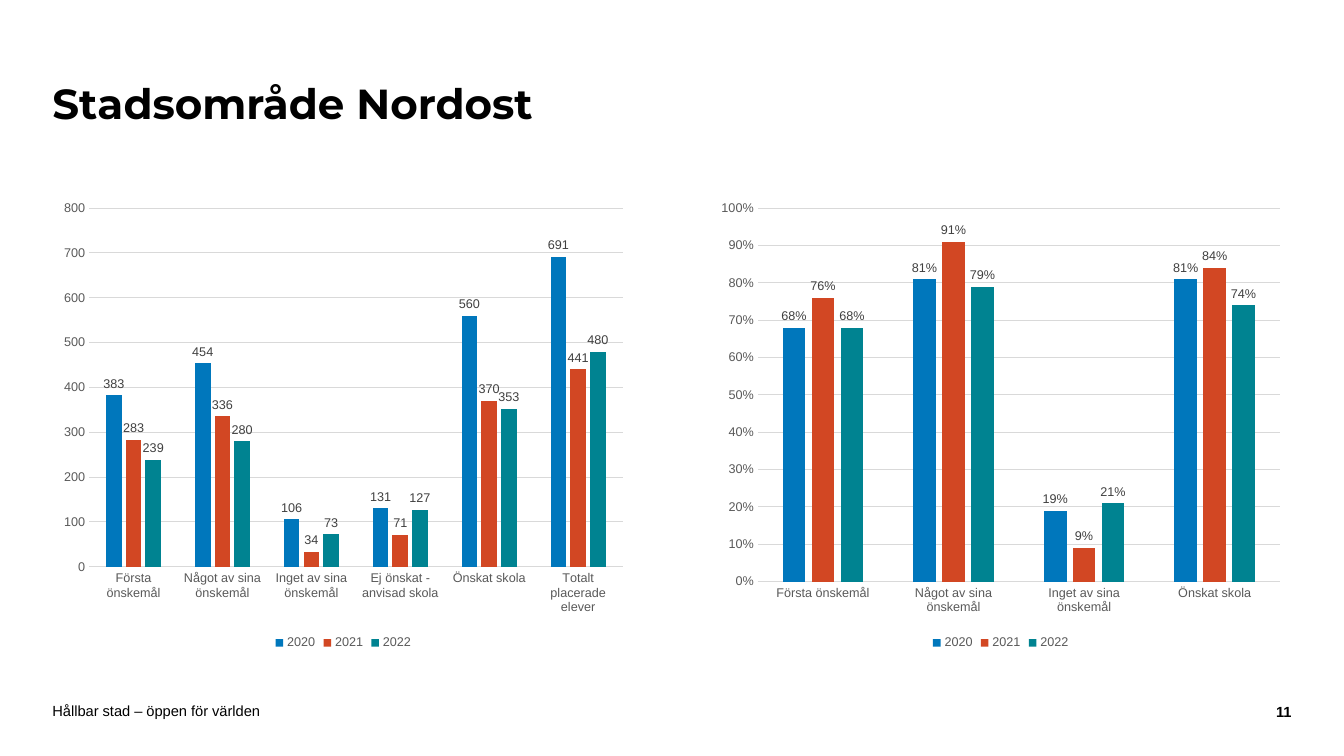
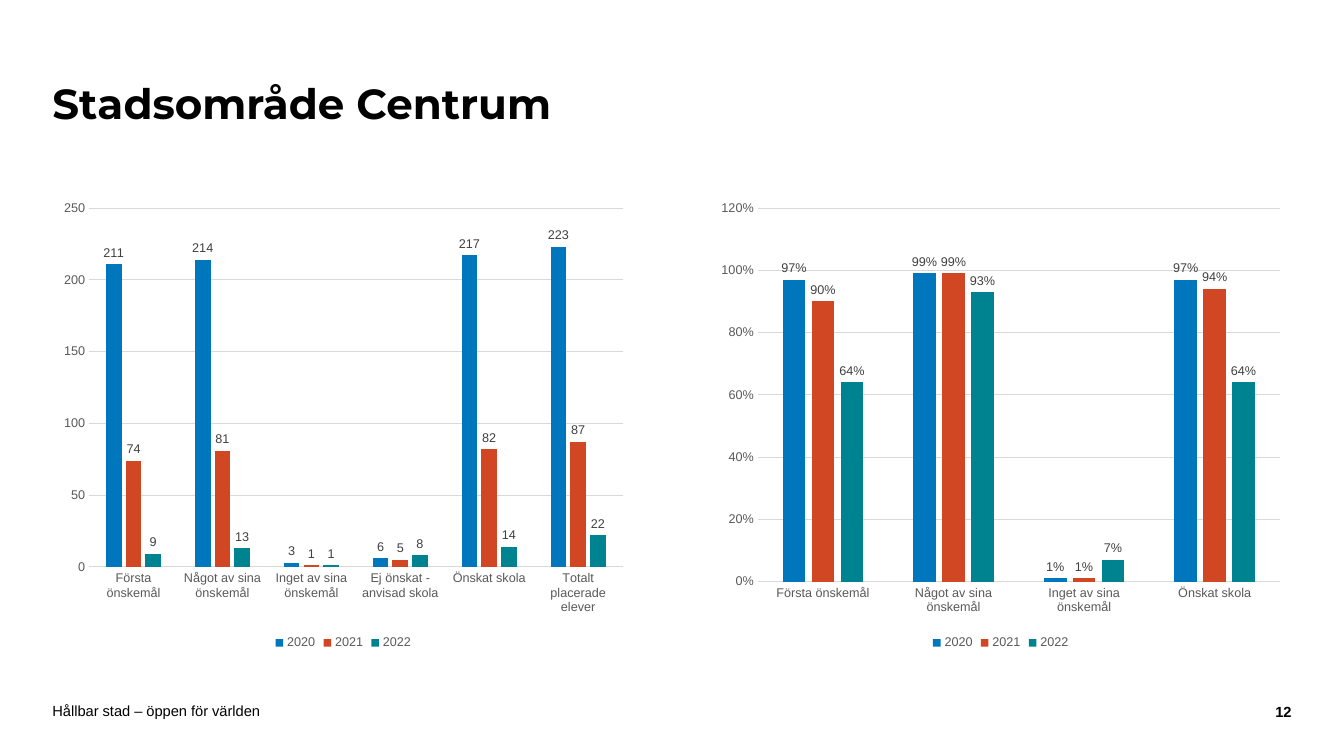
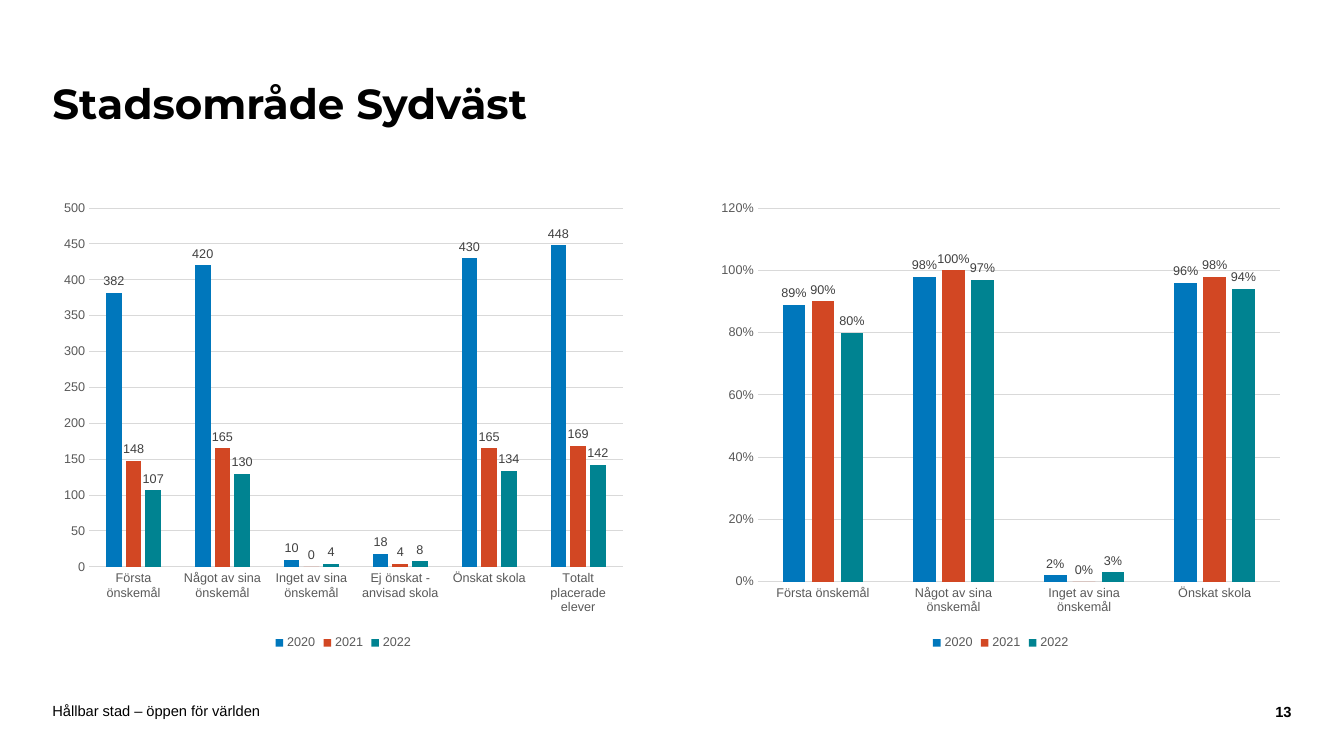
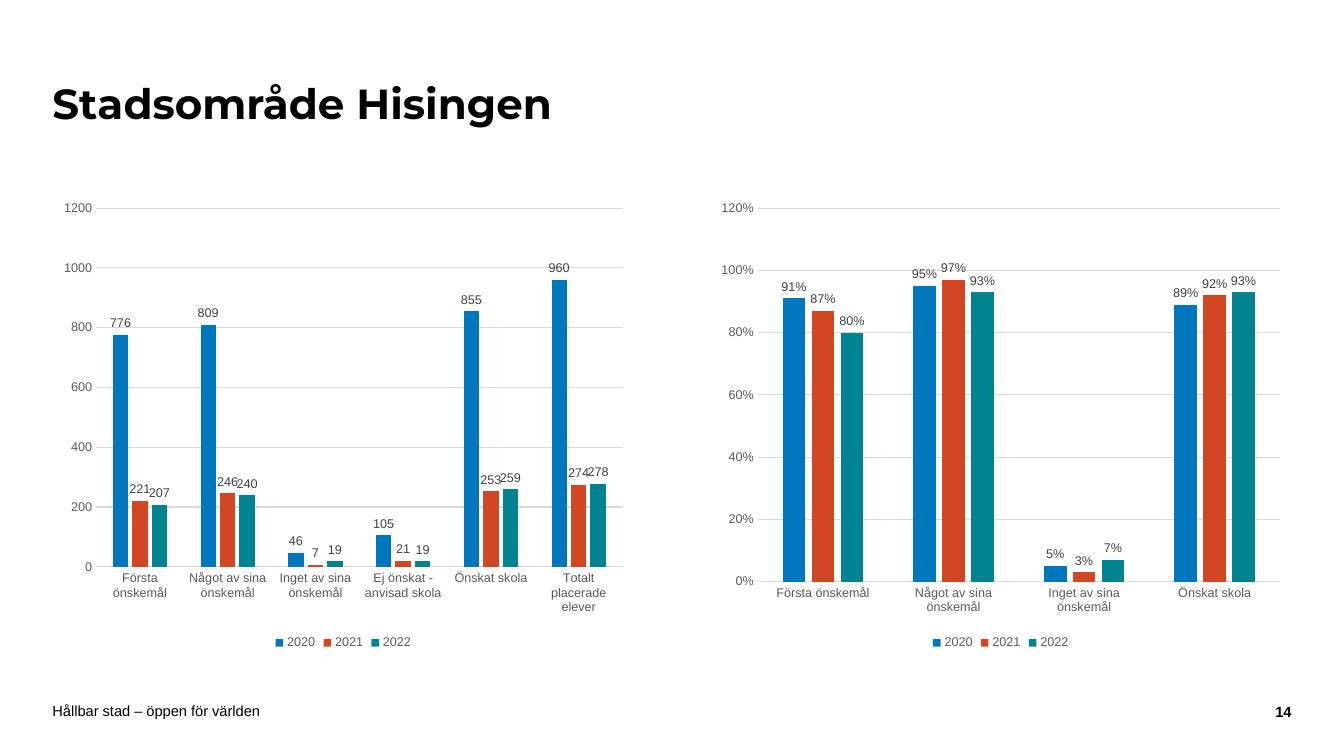
from dataclasses import dataclass

from pptx import Presentation
from pptx.chart.data import CategoryChartData
from pptx.dml.color import RGBColor
from pptx.enum.chart import XL_CHART_TYPE, XL_LABEL_POSITION, XL_LEGEND_POSITION, XL_TICK_MARK
from pptx.enum.text import MSO_ANCHOR, PP_ALIGN
from pptx.util import Inches, Pt

COLUMN = XL_CHART_TYPE.COLUMN_CLUSTERED
OUT_END = XL_LABEL_POSITION.OUTSIDE_END
BOTTOM = XL_LEGEND_POSITION.BOTTOM
NO_TICK = XL_TICK_MARK.NONE
MIDDLE = MSO_ANCHOR.MIDDLE
LEFT, RIGHT = PP_ALIGN.LEFT, PP_ALIGN.RIGHT


@dataclass(frozen=True)
class Theme:
    ink: str = "000000"
    paper: str = "FFFFFF"
    muted: str = "595959"
    label: str = "404040"
    grid: str = "D9D9D9"
    bars: tuple = ("0077BC", "D24723", "008391")
    head: str = "Montserrat"
    body: str = "Arial"
    title: float = 30
    foot: float = 10.5
    chart: float = 10
    small: float = 9
    rule: float = 0.75


THEME = Theme()

YEARS = ("2020", "2021", "2022")
FOOTER = "Hållbar stad – öppen för världen"
FIRST = 11
WISHES = ["Första önskemål", "Något av sina önskemål", "Inget av sina önskemål"]
COUNT_CATS = WISHES + ["Ej önskat - anvisad skola", "Önskat skola", "Totalt placerade elever"]
SHARE_CATS = WISHES + ["Önskat skola"]

AREAS = [
    {
        "title": "Stadsområde Nordost",
        "counts": [(383, 454, 106, 131, 560, 691), (283, 336, 34, 71, 370, 441), (239, 280, 73, 127, 353, 480)],
        "count_axis": (800, 100),
        "shares": [(0.68, 0.81, 0.19, 0.81), (0.76, 0.91, 0.09, 0.84), (0.68, 0.79, 0.21, 0.74)],
        "share_axis": (1, 0.1),
    },
    {
        "title": "Stadsområde Centrum",
        "counts": [(211, 214, 3, 6, 217, 223), (74, 81, 1, 5, 82, 87), (9, 13, 1, 8, 14, 22)],
        "count_axis": (250, 50),
        "shares": [(0.97, 0.99, 0.01, 0.97), (0.9, 0.99, 0.01, 0.94), (0.64, 0.93, 0.07, 0.64)],
        "share_axis": (1.2, 0.2),
    },
    {
        "title": "Stadsområde Sydväst",
        "counts": [(382, 420, 10, 18, 430, 448), (148, 165, 0, 4, 165, 169), (107, 130, 4, 8, 134, 142)],
        "count_axis": (500, 50),
        "shares": [(0.89, 0.98, 0.02, 0.96), (0.9, 1, 0, 0.98), (0.8, 0.97, 0.03, 0.94)],
        "share_axis": (1.2, 0.2),
    },
    {
        "title": "Stadsområde Hisingen",
        "counts": [(776, 809, 46, 105, 855, 960), (221, 246, 7, 21, 253, 274), (207, 240, 19, 19, 259, 278)],
        "count_axis": (1200, 200),
        "shares": [(0.91, 0.95, 0.05, 0.89), (0.87, 0.97, 0.03, 0.92), (0.8, 0.93, 0.07, 0.93)],
        "share_axis": (1.2, 0.2),
    },
]

WIDE, HIGH = 13.33, 7.5
EDGE = 0.52
GAP = 0.75
COL = (WIDE - 2 * EDGE - GAP) / 2
COLS = [EDGE + n * (COL + GAP) for n in range(2)]
TOP, TALL = 1.9, 4.59
NUM = 0.64
TITLE_BOX = (EDGE, 0.42, 10.03, 1.26)
FOOT_BOX = (EDGE, 6.97, 9.45, 0.16)
NUM_BOX = (WIDE - EDGE - NUM, 6.98, NUM, 0.16)


def rgb(code):
    return RGBColor.from_string(code)


def style(font, size, color, face=THEME.body, bold=False):
    font.size = Pt(size)
    font.color.rgb = rgb(color)
    font.name = face
    font.bold = bold


def add_text(slide, box, text, size, face=THEME.body, bold=False, align=LEFT, pad=0, space=1):
    frame = slide.shapes.add_textbox(*map(Inches, box)).text_frame
    frame.word_wrap = True
    frame.vertical_anchor = MIDDLE
    frame.margin_left = frame.margin_right = 0
    frame.margin_top = frame.margin_bottom = Inches(pad)
    para = frame.paragraphs[0]
    para.alignment = align
    para.line_spacing = space
    run = para.add_run()
    run.text = text
    style(run.font, size, THEME.ink, face, bold)


def rule(line):
    line.color.rgb = rgb(THEME.grid)
    line.width = Pt(THEME.rule)


def add_bars(slide, left, cats, rows, scale, form):
    data = CategoryChartData(number_format=form)
    data.categories = cats
    for year, vals in zip(YEARS, rows):
        data.add_series(year, vals)
    box = map(Inches, (left, TOP, COL, TALL))
    chart = slide.shapes.add_chart(COLUMN, *box, data).chart
    chart.has_title = False
    style(chart.font, THEME.chart, THEME.ink)

    chart.has_legend = True
    chart.legend.position = BOTTOM
    chart.legend.include_in_layout = False
    style(chart.legend.font, THEME.small, THEME.muted)

    for axis in (chart.category_axis, chart.value_axis):
        axis.major_tick_mark = axis.minor_tick_mark = NO_TICK
        style(axis.tick_labels.font, THEME.small, THEME.muted)
    rule(chart.category_axis.format.line)
    axis = chart.value_axis
    axis.minimum_scale = 0
    axis.maximum_scale, axis.major_unit = scale
    axis.format.line.fill.background()
    axis.has_major_gridlines = True
    rule(axis.major_gridlines.format.line)
    axis.tick_labels.number_format = form
    axis.tick_labels.number_format_is_linked = False

    plot = chart.plots[0]
    plot.gap_width = 219
    plot.overlap = -27
    plot.vary_by_categories = False
    for bars, color in zip(plot.series, THEME.bars):
        bars.invert_if_negative = False
        bars.format.fill.solid()
        bars.format.fill.fore_color.rgb = rgb(color)
        labels = bars.data_labels
        labels.show_value = True
        labels.position = OUT_END
        labels.number_format = form
        labels.number_format_is_linked = False
        style(labels.font, THEME.small, THEME.label)


def add_area(deck, number, area):
    slide = deck.slides.add_slide(deck.slide_layouts[6])
    fill = slide.background.fill
    fill.solid()
    fill.fore_color.rgb = rgb(THEME.paper)
    add_text(slide, NUM_BOX, str(number), THEME.foot, bold=True, align=RIGHT)
    add_text(slide, FOOT_BOX, FOOTER, THEME.foot)
    add_text(slide, TITLE_BOX, area["title"], THEME.title, THEME.head, True, pad=0.05, space=0.9)
    add_bars(slide, COLS[0], COUNT_CATS, area["counts"], area["count_axis"], "General")
    add_bars(slide, COLS[1], SHARE_CATS, area["shares"], area["share_axis"], "0%")


def main():
    deck = Presentation()
    deck.slide_width, deck.slide_height = Inches(WIDE), Inches(HIGH)
    for number, area in enumerate(AREAS, FIRST):
        add_area(deck, number, area)
    deck.save("out.pptx")


if __name__ == "__main__":
    main()
